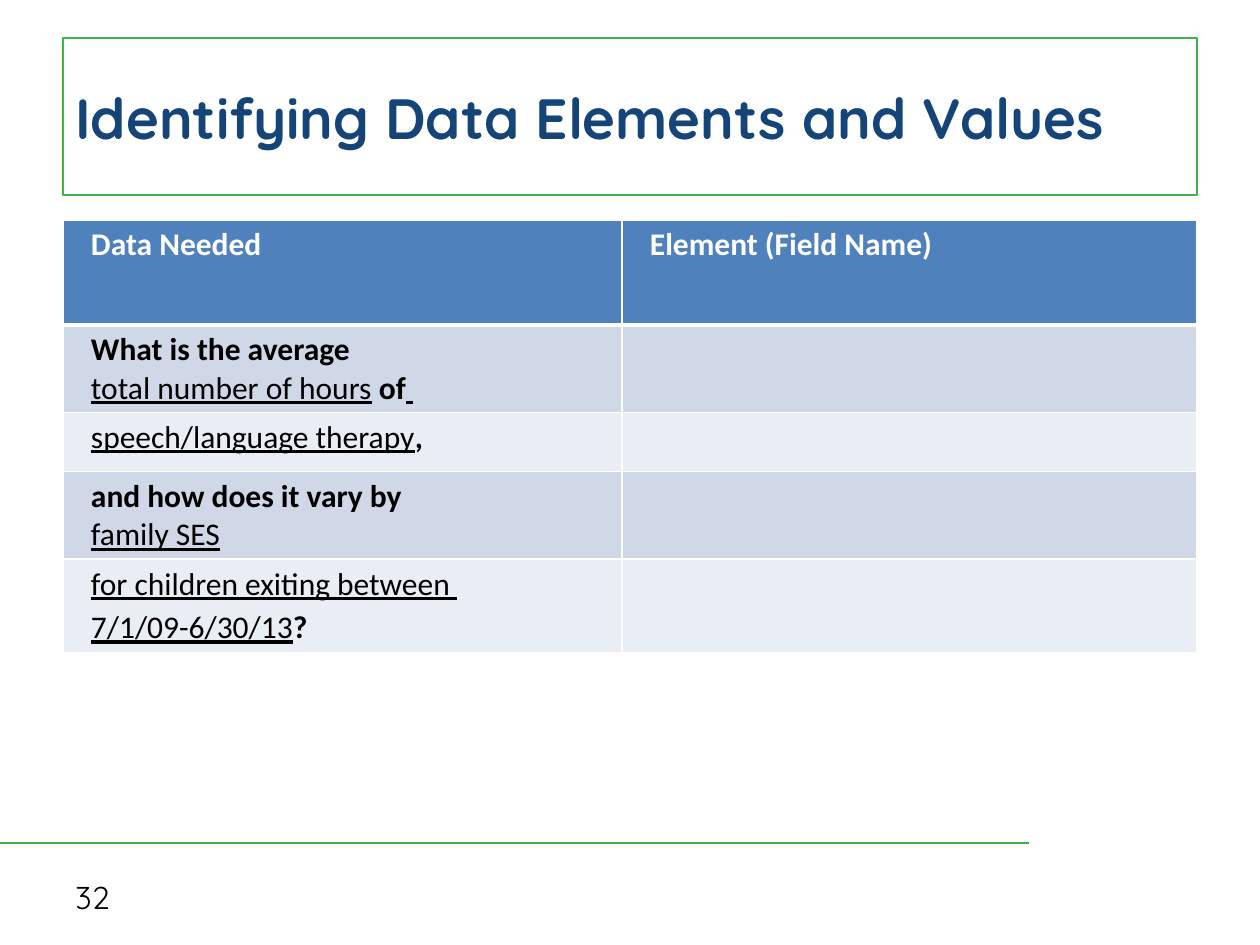
import pptx
import pptx.dml.color
import pptx.enum.shapes
import pptx.enum.text
import pptx.oxml.ns
import pptx.util
from lxml import etree

RGBColor = pptx.dml.color.RGBColor
GREEN = RGBColor(0x39, 0xB5, 0x4A)
NAVY = RGBColor(0x15, 0x45, 0x78)
BLACK = RGBColor(0x00, 0x00, 0x00)
WHITE = RGBColor(0xFF, 0xFF, 0xFF)
HEADER_BLUE = RGBColor(0x4F, 0x81, 0xBD)
BANDS = [RGBColor(0xD0, 0xD8, 0xE8), RGBColor(0xE9, 0xED, 0xF4)]

SCALE = 914400 // 126  # EMU in one px
BOLD, UNDERLINED = "bold", "underlined"

COLUMN_WIDTHS = [559, 575]
ROW_HEIGHTS = [105, 73, 59, 84, 94]
HEADERS = ["Data Needed", "Element (Field Name)"]
# Each question part is a list of paragraphs made of (text, style) spans
QUESTION_PARTS = [
    [[("What is the average", BOLD)],
     [("total number of hours", UNDERLINED), (" of", BOLD), (" ", UNDERLINED)]],
    [[("speech/language therapy", UNDERLINED), (",", BOLD)]],
    [[("and how does it vary by", BOLD)],
     [("family SES", UNDERLINED)]],
    [[("for children exiting between ", UNDERLINED)],
     [("7/1/09-6/30/13", UNDERLINED), ("?", BOLD)]],
]


def px(length):
    return pptx.util.Emu(length * SCALE)


def set_font(font, name, size, color, bold=False):
    font.name = name
    font.size = pptx.util.Pt(size)
    font.bold = bold
    font.color.rgb = color


def write_line(shape, text, size, color, bold=False):
    frame = shape.text_frame
    frame.word_wrap = True
    frame.vertical_anchor = pptx.enum.text.MSO_ANCHOR.MIDDLE
    para = frame.paragraphs[0]
    para.text = text
    para.alignment = pptx.enum.text.PP_ALIGN.LEFT
    set_font(para.font, "Quicksand", size, color, bold)


def add_title(page, text):
    box = page.shapes.add_shape(pptx.enum.shapes.MSO_SHAPE.RECTANGLE,
                                px(63), px(38), px(1134), px(157))
    box.shadow.inherit = False
    box.fill.background()
    box.line.color.rgb = GREEN
    box.line.width = pptx.util.Pt(1)
    write_line(box, text, 32.4, NAVY, bold=True)


def add_footer(page, number):
    rule = page.shapes.add_connector(pptx.enum.shapes.MSO_CONNECTOR.STRAIGHT,
                                     px(0), px(843), px(1029), px(843))
    rule.line.color.rgb = GREEN
    rule.line.width = pptx.util.Pt(1.5)
    etree.SubElement(rule._element.spPr, pptx.oxml.ns.qn("a:effectLst"))
    box = page.shapes.add_textbox(px(63), px(872), px(294), px(50))
    write_line(box, number, 18, BLACK)


def set_borders(cell, top, bottom):
    properties = cell._tc.get_or_add_tcPr()
    widths = {"lnL": 1, "lnR": 1, "lnT": top, "lnB": bottom}
    for position, (tag, width) in enumerate(widths.items()):
        border = etree.Element(pptx.oxml.ns.qn("a:" + tag),
                               w=str(pptx.util.Pt(width)))
        fill = etree.SubElement(border, pptx.oxml.ns.qn("a:solidFill"))
        etree.SubElement(fill, pptx.oxml.ns.qn("a:srgbClr"), val=str(WHITE))
        properties.insert(position, border)


def style_cell(cell, fill, top=1, bottom=1):
    cell.margin_left = cell.margin_right = px(28)
    cell.margin_top = cell.margin_bottom = px(6)
    cell.fill.solid()
    cell.fill.fore_color.rgb = fill
    set_borders(cell, top, bottom)


def write_question(cell, paragraphs, space_before):
    frame = cell.text_frame
    for index, spans in enumerate(paragraphs):
        para = frame.add_paragraph() if index else frame.paragraphs[0]
        if index and space_before:
            para.space_before = pptx.util.Pt(space_before)
        for text, style in spans:
            span = para.add_run()
            span.text = text
            set_font(span.font, "Calibri", 18, BLACK, style == BOLD)
            span.font.underline = style == UNDERLINED


def add_data_table(page):
    frame = page.shapes.add_table(len(ROW_HEIGHTS), len(COLUMN_WIDTHS), px(63), px(220),
                                  px(sum(COLUMN_WIDTHS)), px(sum(ROW_HEIGHTS)))
    table = frame.table
    table.first_row = table.horz_banding = False
    for column, width in zip(table.columns, COLUMN_WIDTHS):
        column.width = px(width)
    for row, height in zip(table.rows, ROW_HEIGHTS):
        row.height = px(height)

    # Header row
    for cell, text in zip(table.rows[0].cells, HEADERS):
        style_cell(cell, HEADER_BLUE, bottom=3)
        para = cell.text_frame.paragraphs[0]
        para.text = text
        set_font(para.font, "Calibri", 18, WHITE, bold=True)

    # Question parts, with the element column left open
    last = len(QUESTION_PARTS)
    for index, paragraphs in enumerate(QUESTION_PARTS, start=1):
        for cell in table.rows[index].cells:
            style_cell(cell, BANDS[(index - 1) % 2], top=3 if index == 1 else 1)
        write_question(table.cell(index, 0), paragraphs, 3 if index == last else 0)


def main():
    deck = pptx.Presentation()
    deck.slide_width, deck.slide_height = px(1260), px(945)
    page = deck.slides.add_slide(deck.slide_layouts[6])
    add_footer(page, "32")
    add_title(page, "Identifying Data Elements and Values")
    add_data_table(page)
    deck.save("out.pptx")


if __name__ == "__main__":
    main()
